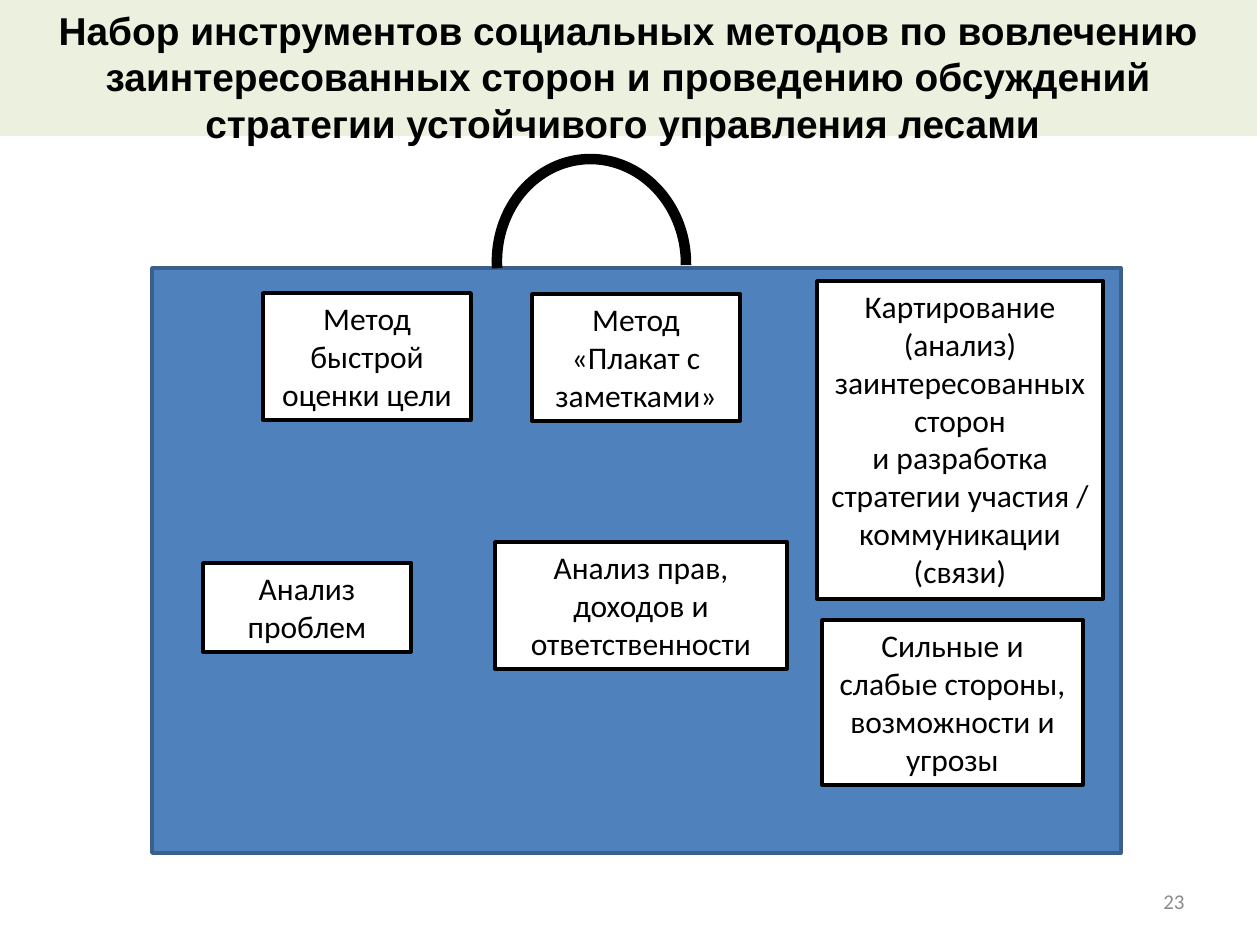
from pptx import Presentation
from pptx import util as u
from pptx.dml.color import RGBColor
from pptx.enum import shapes, text

PX = u.Inches(1) / 126
COLORS = {
    "ink": "000000",
    "card": "FFFFFF",
    "case": "4F81BD",
    "case_edge": "3A5F8C",
    "title_band": "EBF1DE",
    "number": "8C8C8C",
}
TITLE = ("Набор инструментов социальных методов по вовлечению заинтересованных "
         "сторон и проведению обсуждений стратегии устойчивого управления лесами ")
# Box within the toolcase (left, top, width, height) and its paragraphs
TOOLS = [
    ((111, 25, 208, 127), ["Метод быстрой оценки цели"]),
    ((380, 26, 208, 127), ["Метод «Плакат с заметками»"]),
    ((665, 13, 286, 318), ["Картирование (анализ) заинтересованных сторон",
                           "и разработка стратегии участия / коммуникации (связи)"]),
    ((51, 295, 208, 89), ["Анализ проблем"]),
    ((343, 274, 292, 127), ["Анализ прав, доходов и ответственности"]),
    ((670, 352, 261, 165), ["Сильные и слабые стороны, возможности и угрозы"]),
]


def emu(box):
    return [round(value * PX) for value in box]


def color(name):
    return RGBColor.from_string(COLORS[name])


def add_outlined(slide, kind, box, fill, line, width):
    shape = slide.shapes.add_shape(kind, *emu(box))
    shape.shadow.inherit = False
    if fill:
        shape.fill.solid()
        shape.fill.fore_color.rgb = color(fill)
    else:
        shape.fill.background()
    shape.line.color.rgb = color(line)
    shape.line.width = u.Pt(width)
    return shape


def write(frame, paragraphs, font_name, size, ink, alignment, bold=False):
    frame.word_wrap = True
    for index, content in enumerate(paragraphs):
        paragraph = frame.add_paragraph() if index else frame.paragraphs[0]
        paragraph.alignment = alignment
        run = paragraph.add_run()
        run.text = content
        run.font.name = font_name
        run.font.size = u.Pt(size)
        run.font.bold = bold
        run.font.color.rgb = color(ink)


def add_title(slide, box):
    title = slide.shapes.title
    title.left, title.top, title.width, title.height = emu(box)
    title.fill.solid()
    title.fill.fore_color.rgb = color("title_band")
    frame = title.text_frame
    frame.auto_size = text.MSO_AUTO_SIZE.NONE
    frame.vertical_anchor = text.MSO_ANCHOR.TOP
    write(frame, [TITLE], "Arial", 22.2, "ink", text.PP_ALIGN.CENTER, bold=True)


def add_toolcase(slide, box):
    """Case with an arched handle, holding one card per tool."""
    left, top = box[:2]
    rectangle = shapes.MSO_SHAPE.RECTANGLE
    add_outlined(slide, rectangle, box, "case", "case_edge", 2)

    handle = add_outlined(slide, shapes.MSO_SHAPE.ARC,
                          (left + 336, top - 100, 207, 189), None, "ink", 6)
    handle.rotation = 266.5
    handle.adjustments[0] = 162
    handle.adjustments[1] = 57.07

    for (x, y, width, height), paragraphs in TOOLS:
        card = add_outlined(slide, rectangle, (left + x, top + y, width, height),
                            "card", "ink", 2)
        frame = card.text_frame
        frame.vertical_anchor = text.MSO_ANCHOR.TOP
        frame.auto_size = text.MSO_AUTO_SIZE.SHAPE_TO_FIT_TEXT
        write(frame, paragraphs, "Calibri", 18, "ink", text.PP_ALIGN.CENTER)


def add_slide_number(slide, box):
    frame = slide.shapes.add_textbox(*emu(box)).text_frame
    frame.vertical_anchor = text.MSO_ANCHOR.MIDDLE
    write(frame, ["23"], "Calibri", 12, "number", text.PP_ALIGN.RIGHT)


def main():
    presentation = Presentation()
    presentation.slide_width, presentation.slide_height = emu((1260, 945))
    slide = presentation.slides.add_slide(presentation.slide_layouts[5])
    add_title(slide, (0, 0, 1257, 136))
    add_toolcase(slide, (152, 268, 969, 585))
    add_slide_number(slide, (903, 876, 294, 50))
    presentation.save("out.pptx")


if __name__ == "__main__":
    main()
